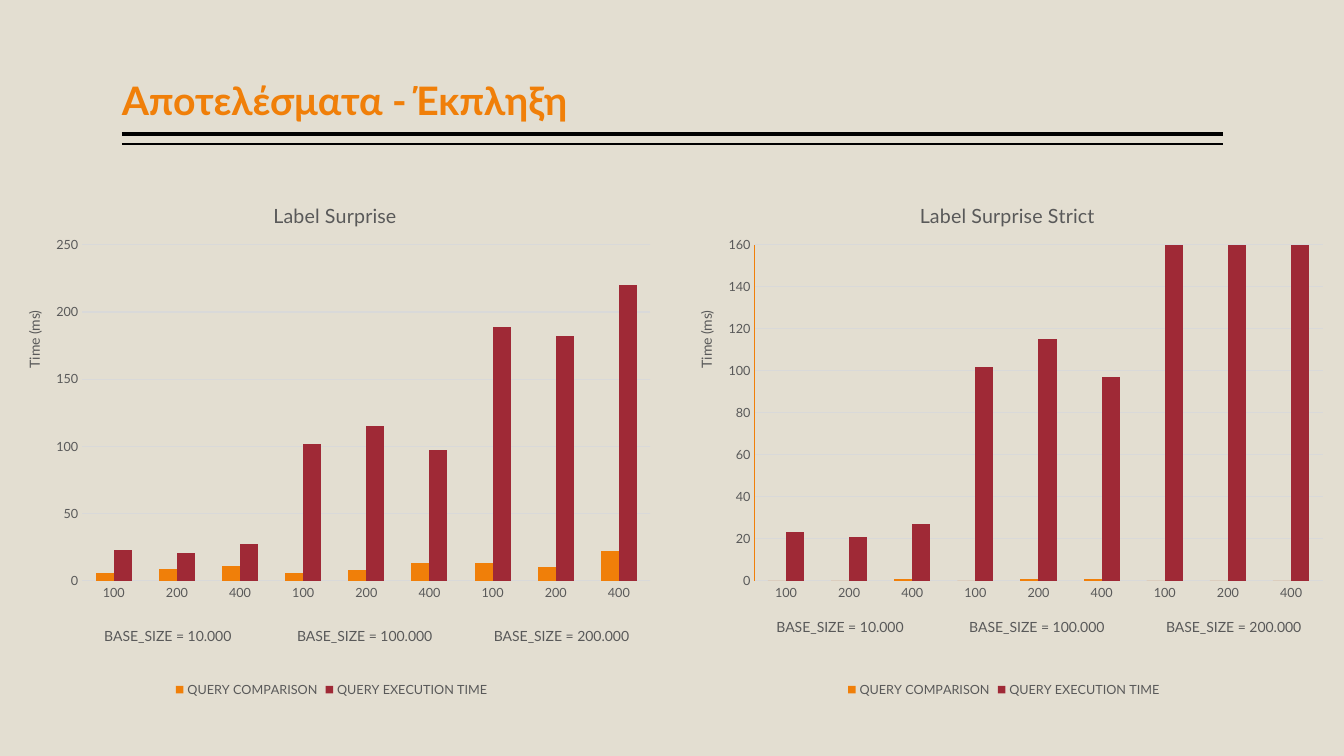
from lxml import etree
from pptx import Presentation
from pptx.chart.data import CategoryChartData
from pptx.dml.color import RGBColor
from pptx.enum.chart import XL_CHART_TYPE, XL_LEGEND_POSITION, XL_TICK_MARK
from pptx.enum.shapes import MSO_CONNECTOR
from pptx.enum.text import MSO_ANCHOR, PP_ALIGN
from pptx.oxml.ns import qn
from pptx.util import Cm, Pt

COLUMNS = XL_CHART_TYPE.COLUMN_CLUSTERED
LEGEND_BOTTOM = XL_LEGEND_POSITION.BOTTOM
NO_TICKS = XL_TICK_MARK.NONE
STRAIGHT = MSO_CONNECTOR.STRAIGHT
ANCHOR_BOTTOM, ANCHOR_MIDDLE = MSO_ANCHOR.BOTTOM, MSO_ANCHOR.MIDDLE
CENTER = PP_ALIGN.CENTER
FONT, ORANGE, RED, GREY, PALE = "Lato", "F07F09", "9F2936", "595959", "D9D9D9"


def style(font, size, color, bold=False):
    font.name = FONT
    font.size = Pt(size)
    font.bold = bold
    font.color.rgb = RGBColor.from_string(color)


def place(parent, index, **settings):
    for old in parent.findall(qn("c:layout")):
        parent.remove(old)
    layout = etree.Element(qn("c:layout"))
    manual = etree.SubElement(layout, qn("c:manualLayout"))
    for tag, value in settings.items():
        etree.SubElement(manual, qn("c:" + tag)).set("val", str(value))
    parent.insert(index, layout)


prs = Presentation()
prs.slide_width, prs.slide_height = Cm(33.87), Cm(19.05)
slide = prs.slides.add_slide(prs.slide_layouts[6])
slide.background.fill.solid()
slide.background.fill.fore_color.rgb = RGBColor.from_string("E3DED1")

for rule_y, weight in [(3.38, 3), (3.63, 1)]:
    rule = slide.shapes.add_connector(STRAIGHT, Cm(3.07), Cm(rule_y), Cm(30.81), Cm(rule_y))
    rule.line.color.rgb = RGBColor.from_string("000000")
    rule.line.width = Pt(weight)
    etree.SubElement(rule._element.spPr, qn("a:effectLst"))

heading = slide.shapes.add_textbox(Cm(3.07), Cm(0.2), Cm(27.74), Cm(3.05)).text_frame
heading.word_wrap = True
heading.vertical_anchor = ANCHOR_BOTTOM
heading.margin_left = heading.margin_right = 0
heading.text = "Αποτελέσματα - Έκπληξη"
heading.paragraphs[0].line_spacing = 0.9
style(heading.paragraphs[0].runs[0].font, 28, ORANGE, True)

query_sizes = ["100", "200", "400"] * 3
base_sizes = ["10.000", "100.000", "200.000"]
execution_times = [23, 21, 27, 102, 115, 97, 189, 182, 220]
panels = [
    ("Label Surprise", 0, 0.407, 16.03, [6, 9, 11, 6, 8, 13, 13, 10, 22], 250, 50),
    ("Label Surprise Strict", 16.94, 0.368, 15.8, [0, 0, 1, 0, 1, 1, 0, 0, 0], 160, 20),
]

for name, left, title_x, group_y, comparisons, top_time, step in panels:
    data = CategoryChartData()
    data.categories = query_sizes
    data.add_series("QUERY COMPARISON", comparisons)
    data.add_series("QUERY EXECUTION TIME", execution_times)
    chart = slide.shapes.add_chart(
        COLUMNS, Cm(left), Cm(4.45), Cm(16.71), Cm(13.23), data).chart
    style(chart.font, 10, "000000")

    chart.has_title = True
    chart.chart_title.text_frame.text = name
    style(chart.chart_title.text_frame.paragraphs[0].runs[0].font, 14, GREY)
    place(chart.chart_title._element, 1, xMode="edge", yMode="edge", x=title_x, y=0.04)

    chart.has_legend = True
    chart.legend.position = LEGEND_BOTTOM
    chart.legend.include_in_layout = False
    style(chart.legend.font, 9, GREY)

    plot = chart.plots[0]
    plot.gap_width = 150
    plot.overlap = 0
    plot.vary_by_categories = False
    for series, color in zip(plot.series, [ORANGE, RED]):
        series.format.fill.solid()
        series.format.fill.fore_color.rgb = RGBColor.from_string(color)
    place(chart._chartSpace.chart.plotArea, 0, layoutTarget="inner", xMode="edge",
          yMode="edge", x=0.124, y=0.13, w=0.857, h=0.64)

    times = chart.value_axis
    for axis in (chart.category_axis, times):
        axis.major_tick_mark = axis.minor_tick_mark = NO_TICKS
        style(axis.tick_labels.font, 9, GREY)
        axis.format.line.width = Pt(0.75)
        axis.format.line.color.rgb = RGBColor.from_string(PALE)
    times.minimum_scale, times.maximum_scale, times.major_unit = 0, top_time, step
    times.major_gridlines.format.line.width = Pt(0.75)
    times.major_gridlines.format.line.color.rgb = RGBColor.from_string(PALE)
    if name == "Label Surprise Strict":
        times.format.line.color.rgb = RGBColor.from_string(ORANGE)
    else:
        times.format.line.fill.background()

    time_title = times.axis_title
    time_title.text_frame.text = "Time (ms)"
    style(time_title.text_frame.paragraphs[0].runs[0].font, 10, GREY)
    time_title.text_frame._txBody.bodyPr.set("rot", "-5400000")
    place(time_title._element, 1, xMode="edge", yMode="edge", x=0.033, y=0.25)

    for i, base_size in enumerate(base_sizes):
        group = slide.shapes.add_textbox(
            Cm(left + 1.75 + 4.96 * i), Cm(group_y - 0.4), Cm(4.96), Cm(0.8)).text_frame
        group.word_wrap = True
        group.vertical_anchor = ANCHOR_MIDDLE
        group.text = f"BASE_SIZE = {base_size}"
        group.paragraphs[0].alignment = CENTER
        style(group.paragraphs[0].runs[0].font, 10, GREY)

prs.save("out.pptx")
